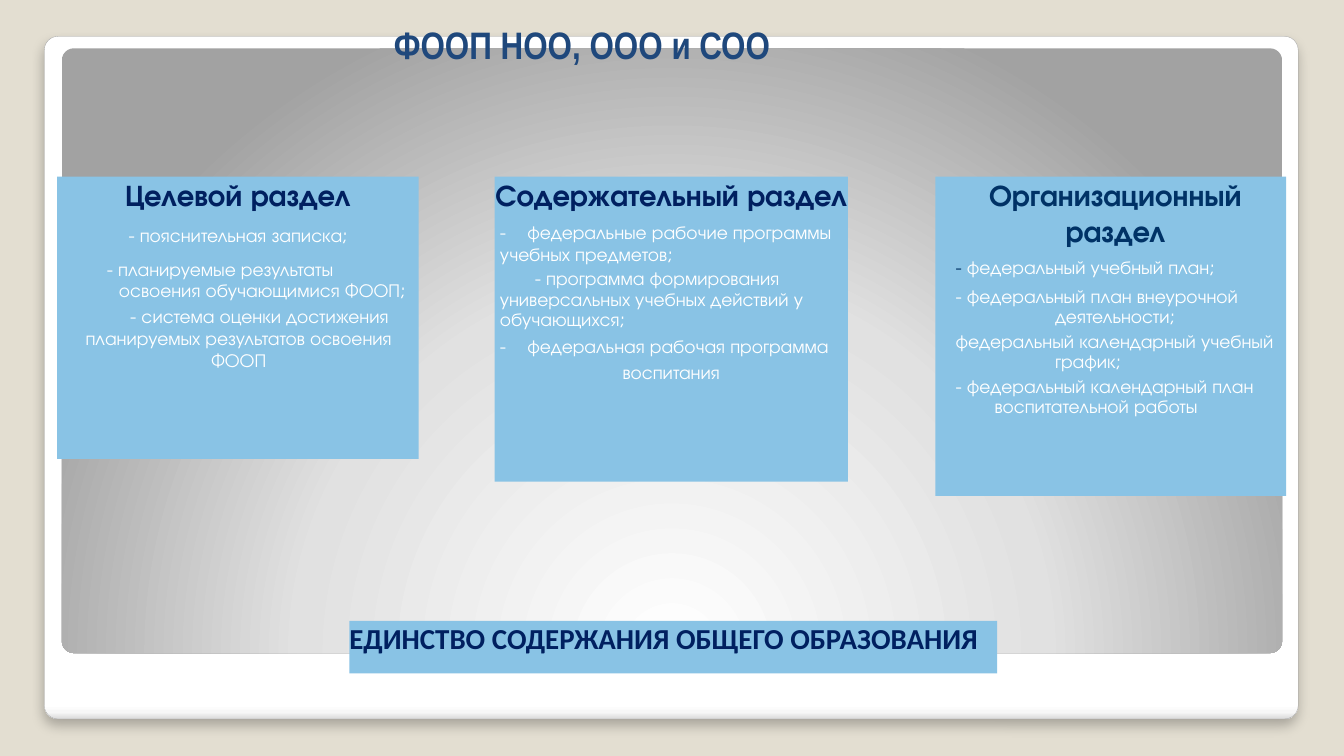
from pptx import Presentation
from pptx import util as u
from pptx.dml.color import RGBColor
from pptx.enum import shapes, text
from pptx.oxml import parse_xml
from pptx.oxml.ns import nsdecls, qn

COLORS = {
    "page": "E3DED1", "edge": "A4A4A4", "card": "89C3E5", "title": "1F487C",
    "navy": "002060", "blue": "003266", "white": "FFFFFF",
}
COLS, ROWS = 100, 56.25
BODY_FONT = "TeX Gyre Adventor"
CENTER, LEFT = text.PP_ALIGN.CENTER, text.PP_ALIGN.LEFT


def write(p, words, size=10, color="white", bold=False, font=BODY_FONT, align=LEFT,
          margin=0, indent=0, spread=0, line=None, after=0):
    """Add a formatted run to a paragraph and set the paragraph's layout."""
    r = p.add_run()
    r.text = words
    r.font.size, r.font.bold, r.font.name = u.Pt(size), bold, font
    r.font.color.rgb = RGBColor.from_string(COLORS[color])
    if spread:
        r._r.get_or_add_rPr().set("spc", str(int(spread * 100)))
    p.alignment, p.space_after = align, u.Pt(after)
    if line:
        p.line_spacing = u.Pt(line)
    props = p._p.get_or_add_pPr()
    props.set("marL", str(u.Inches(margin)))
    props.set("indent", str(u.Inches(indent)))


class Deck:
    """Hold the style, the grid and the current slide."""

    def __init__(self):
        """Start a deck with one title-only slide."""
        self.prs = Presentation()
        self.prs.slide_width, self.prs.slide_height = u.Pt(720), u.Pt(405)
        self.s = self.prs.slides.add_slide(self.prs.slide_layouts[5])
        fill = self.s.background.fill
        fill.solid()
        fill.fore_color.rgb = RGBColor.from_string(COLORS["page"])

    def place(self, col, row, cols, rows):
        """Turn grid units into slide lengths."""
        x, y = self.prs.slide_width / COLS, self.prs.slide_height / ROWS
        return int(col * x), int(row * y), int(cols * x), int(rows * y)

    def shape(self, kind, box):
        """Add a shape without line or shadow."""
        sp = self.s.shapes.add_shape(kind, *self.place(*box))
        sp.shadow.inherit = False
        sp.line.fill.background()
        return sp

    def frame(self, sp):
        """Prepare a text frame without margins."""
        tf = sp.text_frame
        tf.word_wrap, tf.auto_size = True, text.MSO_AUTO_SIZE.NONE
        tf.vertical_anchor = text.MSO_ANCHOR.TOP
        tf.margin_left = tf.margin_top = tf.margin_right = tf.margin_bottom = 0
        return tf

    def title(self, words, box, **style):
        """Move the title placeholder to the front and fill it."""
        sp = self.s.shapes.title
        sp.left, sp.top, sp.width, sp.height = self.place(*box)
        sp.element.getparent().append(sp.element)
        write(self.frame(sp).paragraphs[0], words, **style)

    def panel(self, box, stops, direction):
        """Add a rounded panel with a gradient fill."""
        sp = self.shape(shapes.MSO_SHAPE.ROUNDED_RECTANGLE, box)
        sp.adjustments[0] = 0.02
        sp.fill.gradient()
        marks = "".join(f'<a:gs pos="{pos * 1000}"><a:srgbClr val="{color}"/></a:gs>'
                        for pos, color in stops)
        old = sp.element.spPr.find(qn("a:gradFill"))
        old.getparent().replace(old, parse_xml(
            f'<a:gradFill {nsdecls("a")} rotWithShape="1"><a:gsLst>{marks}</a:gsLst>'
            f'{direction}</a:gradFill>'))
        return sp

    def edge(self, sp):
        """Give a panel a hairline and a soft shadow below."""
        sp.line.color.rgb = RGBColor.from_string(COLORS["edge"])
        sp.line.width = u.Pt(0.16)
        sp.element.spPr.find(qn("a:effectLst")).append(parse_xml(
            f'<a:outerShdw {nsdecls("a")} blurRad="{u.Pt(6)}" dist="{u.Pt(4)}" dir="5400000">'
            '<a:srgbClr val="000000"><a:alpha val="25000"/></a:srgbClr></a:outerShdw>'))

    def card(self, box, paragraphs):
        """Add a plain card; each paragraph is a list of (words, style) runs."""
        sp = self.shape(shapes.MSO_SHAPE.RECTANGLE, box)
        sp.fill.solid()
        sp.fill.fore_color.rgb = RGBColor.from_string(COLORS["card"])
        tf = self.frame(sp)
        for i, runs in enumerate(paragraphs):
            p = tf.add_paragraph() if i else tf.paragraphs[0]
            for words, style in runs:
                write(p, words, **style)


HEAD = dict(size=16, color="navy", bold=True, align=CENTER)
DASHED = dict(margin=0.04, after=2.1)
WIDE_DASH = ("- ", dict(DASHED, spread=4.3))
HANGING = dict(margin=0.44, indent=-0.29)
DEEP = dict(margin=0.89, indent=-0.74, line=11, after=2.1)

CARDS = [
    ((4.25, 13.15, 26.9, 21), [
        [("Целевой раздел", dict(HEAD, after=6.3))],
        [("- пояснительная записка;", dict(align=CENTER, after=6.3))],
        [("- планируемые результаты освоения обучающимися ФООП;",
          dict(margin=0.46, indent=-0.09, line=11.5, after=2.1))],
        [("- система оценки достижения планируемых результатов освоения ФООП",
          dict(align=CENTER, margin=0.01, indent=0.31, line=11.8))],
    ]),
    ((36.8, 13.15, 26.3, 22.7), [
        [("Содержательный раздел", dict(HEAD, after=4.2))],
        [WIDE_DASH, ("федеральные рабочие программы учебных предметов;", DASHED)],
        [("- программа формирования универсальных учебных действий у обучающихся;",
          dict(margin=0.04, indent=0.26, line=11, after=2.1))],
        [WIDE_DASH, ("федеральная рабочая программа", DASHED)],
        [("воспитания", dict(align=CENTER))],
    ]),
    ((69.6, 13.15, 26.1, 23.75), [
        [("Организационный раздел", dict(HEAD, color="blue", margin=0.07, after=4.2))],
        [("- ", dict(HANGING, color="blue", after=4.2)),
         ("федеральный учебный план;", dict(HANGING, after=4.2))],
        [("- федеральный план внеурочной деятельности;", DEEP)],
        [("федеральный календарный учебный график;", DEEP)],
        [("- федеральный календарный план воспитательной работы", dict(HANGING, line=11))],
    ]),
    ((26, 46.2, 48.2, 3.9), [
        [("ЕДИНСТВО СОДЕРЖАНИЯ ОБЩЕГО ОБРАЗОВАНИЯ",
          dict(size=15.5, color="navy", bold=True, font="Calibri"))],
    ]),
]


def main():
    """Build the slide and save it."""
    deck = Deck()
    sheet = deck.panel((3.3, 2.7, 93.3, 50.8),
                       [(0, "FFFFFF"), (98, "FFFFFF"), (99, "F7F7F7"), (100, "DADADA")],
                       '<a:lin ang="5400000" scaled="0"/>')
    deck.edge(sheet)
    deck.panel((4.6, 3.6, 90.8, 45), [(0, "FFFFFF"), (55, "E1E1E1"), (100, "A2A2A2")],
               '<a:path path="circle">'
               '<a:fillToRect l="50000" t="175000" r="50000" b="-75000"/></a:path>')
    deck.title("ФООП НОО, ООО и СОО", (29.3, 1.6, 41.5, 5.3),
               size=20.5, color="title", bold=True, font="Arial Narrow")
    for box, paragraphs in CARDS:
        deck.card(box, paragraphs)
    deck.prs.save("out.pptx")


if __name__ == "__main__":
    main()
